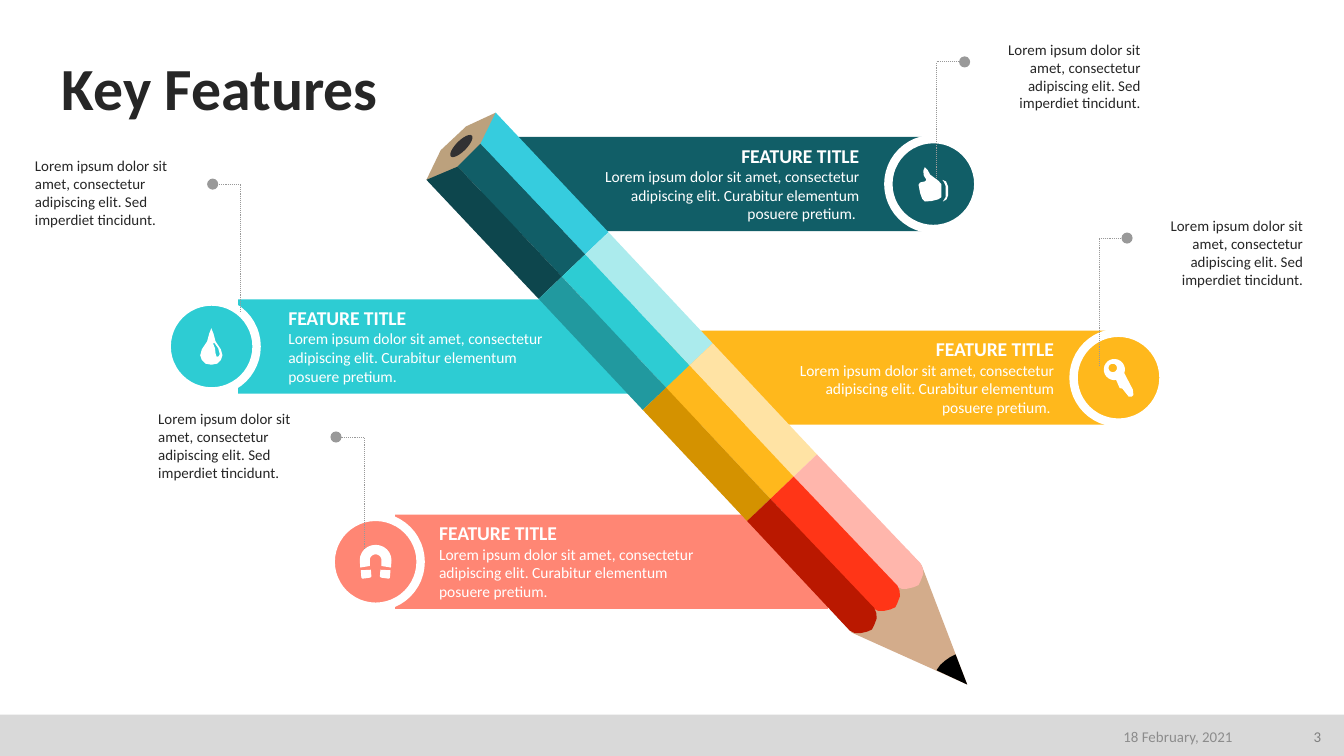
from collections import namedtuple
from math import cos, radians, sin

from lxml.etree import SubElement
from pptx import Presentation
from pptx.dml.color import RGBColor
from pptx.enum.dml import MSO_LINE
from pptx.enum.shapes import MSO_CONNECTOR, MSO_SHAPE as SHAPE
from pptx.enum.text import MSO_ANCHOR as ANCHOR, MSO_AUTO_SIZE, PP_ALIGN as ALIGN
from pptx.oxml.ns import qn
from pptx.util import Cm, Pt

DARK, WHITE, GREY = "262626", "FFFFFF", "999999"
TEAL, CYAN, YELLOW, CORAL = "115E67", "2DCCD3", "FFB81C", "FF8674"
LOREM = "Lorem ipsum dolor sit amet, consectetur adipiscing elit. "


def paint(shape, fill, line=None, width=0):
    shape.shadow.inherit = False
    shape.fill.solid()
    shape.fill.fore_color.rgb = RGBColor.from_string(fill)
    if line:
        shape.line.color.rgb = RGBColor.from_string(line)
        shape.line.width = Pt(width)
    else:
        shape.line.fill.background()


def write(frame, text, size=8, color=DARK, bold=False, align=ALIGN.LEFT, anchor=ANCHOR.TOP):
    frame.word_wrap = True
    frame.auto_size = MSO_AUTO_SIZE.NONE
    frame.vertical_anchor = anchor
    paragraph = frame.add_paragraph() if frame.text else frame.paragraphs[0]
    paragraph.alignment = align
    run = paragraph.add_run()
    run.text = text
    run.font.name = "Calibri"
    run.font.size = Pt(size)
    run.font.bold = bold
    run.font.color.rgb = RGBColor.from_string(color)
    return paragraph


prs = Presentation()
prs.slide_width, prs.slide_height = Cm(25.4), Cm(14.29)
shapes = prs.slides.add_slide(prs.slide_layouts[5]).shapes

# Footer band, page number and date
band = shapes.add_shape(SHAPE.RECTANGLE, 0, Cm(13.51), Cm(25.4), Cm(0.78))
paint(band, "D9D9D9")
for text, left, width, color in [("3", 24.28, 0.94, "808080"),
                                 ("18 February, 2021", 17.83, 5.72, "8C8C8C")]:
    footer = shapes.add_textbox(Cm(left), Cm(13.59), Cm(width), Cm(0.66))
    write(footer.text_frame, text, color=color, align=ALIGN.RIGHT, anchor=ANCHOR.MIDDLE)

# Title
title = shapes.title
title.left, title.top, title.width, title.height = Cm(1.17), Cm(1.02), Cm(23.11), Cm(1.32)
heading = title.text_frame
heading.margin_left = heading.margin_right = heading.margin_top = heading.margin_bottom = 0
write(heading, "Key Features", size=32, bold=True, anchor=ANCHOR.BOTTOM).line_spacing = 0.9

# Icons: lists of contours in cm, measured from the icon's top left corner
thumb_hand = [(0.15, 0.25), (0.1, 0.17), (0.09, 0.08), (0.12, 0.01), (0.17, 0.06), (0.22, 0.15),
              (0.38, 0.27), (0.43, 0.33), (0.43, 0.58), (0.37, 0.62), (0.25, 0.65), (0.12, 0.66),
              (0.07, 0.61), (0.03, 0.5), (0, 0.34), (0.03, 0.3), (0.12, 0.28)]
thumb_cuff = [(0.45, 0.25), (0.52, 0.28), (0.56, 0.38), (0.56, 0.54), (0.53, 0.62), (0.46, 0.66),
              (0.51, 0.58), (0.51, 0.36), (0.48, 0.29)]
thumb = [thumb_hand, thumb_cuff]

drop_half = [(0, 0), (0.04, 0.1), (0.08, 0.25), (0.18, 0.4), (0.21, 0.51), (0.18, 0.6),
             (0.11, 0.67), (0, 0.69)]
drop_shine = [(0.23, 0.28), (0.27, 0.38), (0.28, 0.48), (0.3, 0.54), (0.34, 0.53), (0.36, 0.49),
              (0.33, 0.38), (0.26, 0.28)]
drop = [[(0.2 + x, y) for x, y in drop_half] + [(0.2 - x, y) for x, y in drop_half[::-1]],
        drop_shine]

# The key's bow is an arc left open where the shaft joins it
bow_turn = [radians(degree) for degree in range(80, 386, 15)]
hole_turn = [radians(degree) for degree in range(0, 360, 20)]
key_shaft = [(0.55, 0.58), (0.56, 0.68), (0.53, 0.71), (0.47, 0.71), (0.35, 0.56), (0.3, 0.55)]
key = [[(0.2 + 0.2 * cos(a), 0.2 + 0.2 * sin(a)) for a in bow_turn] + key_shaft,
       [(0.17 + 0.08 * cos(a), 0.17 + 0.08 * sin(a)) for a in hole_turn]]

# The magnet's arch lies between two half circles, above mirrored feet
half_turn = [radians(degree) for degree in range(0, 181, 15)]
arch_outside = [(0.3 - 0.3 * cos(a), 0.29 - 0.29 * sin(a)) for a in half_turn]
arch_inside = [(0.3 + 0.11 * cos(a), 0.29 - 0.11 * sin(a)) for a in half_turn]
left_foot = [(0.02, 0.48), (0.21, 0.47), (0.22, 0.6), (0.2, 0.62), (0.05, 0.64), (0.03, 0.62)]
magnet = [arch_outside + [(0.59, 0.43), (0.41, 0.4)] + arch_inside + [(0.19, 0.4), (0.01, 0.43)],
          left_foot, [(0.6 - x, y) for x, y in left_foot]]

# Features: a bar with text, a circle with an icon and a callout on a leader line
Feature = namedtuple("Feature", "color on_right bar_left bar_width top text_left "
                                "circle_left leader_x leader_y icon")
features = [
    Feature(TEAL, True, 9.09, 8.53, 2.59, 10.9, 16.79, 17.7, 1.17, thumb),
    Feature(CYAN, False, 4.5, 7.54, 5.66, 5.2, 3.15, 4.55, 3.48, drop),
    Feature(YELLOW, True, 12.45, 8.66, 6.25, 14.58, 20.29, 20.77, 4.5, key),
    Feature(CORAL, False, 7.47, 8.18, 9.73, 8.05, 6.25, 6.88, 8.26, magnet),
]
BAR_HEIGHT, CIRCLE = 1.78, 1.7
outlines = []  # (color, contours, x offset, y offset)
for feature in features:
    align = ALIGN.RIGHT if feature.on_right else ALIGN.LEFT
    top = Cm(feature.top)
    bar = shapes.add_shape(SHAPE.RECTANGLE, Cm(feature.bar_left), top,
                           Cm(feature.bar_width), Cm(BAR_HEIGHT))
    paint(bar, feature.color)
    description = shapes.add_textbox(Cm(feature.text_left), top, Cm(5.59), Cm(1.85)).text_frame
    write(description, "FEATURE TITLE", size=10.5, color=WHITE, bold=True, align=align)
    ending = "Curabitur elementum posuere pretium." + (" " if feature.on_right else "")
    write(description, LOREM + ending, size=8.3, color=WHITE, align=align)

    circle_top = feature.top + (BAR_HEIGHT - CIRCLE) / 2
    circle = shapes.add_shape(SHAPE.OVAL, Cm(feature.circle_left), Cm(circle_top),
                              Cm(CIRCLE), Cm(CIRCLE))
    paint(circle, feature.color, WHITE, 4.5)
    icon_width, icon_height = map(max, zip(*sum(feature.icon, [])))
    outlines.append((WHITE, feature.icon, feature.circle_left + (CIRCLE - icon_width) / 2,
                     circle_top + (CIRCLE - icon_height) / 2))

    # Leader: up from the circle, then out to a dot beside the note
    x, y = feature.leader_x, feature.leader_y
    foot, corner = (x, y + 2.41), (x, y)
    dot = (x + 0.53 if feature.on_right else x - 0.53, y)
    for start, end in [(foot, corner), (corner, dot)]:
        leader = shapes.add_connector(MSO_CONNECTOR.STRAIGHT, *map(Cm, start + end))
        leader.line.color.rgb = RGBColor.from_string(GREY)
        leader.line.width = Pt(0.5)
        leader.line.dash_style = MSO_LINE.ROUND_DOT
        if end == dot:
            SubElement(leader.line._get_or_add_ln(), qn("a:tailEnd"), type="oval")
        SubElement(leader._element.spPr, qn("a:effectLst"))
    note_left, note_top = (x + 0.6, y - 0.53) if feature.on_right else (x - 4.14, y - 0.64)
    note = shapes.add_textbox(Cm(note_left), Cm(note_top), Cm(3.51), Cm(1.14))
    write(note.text_frame, LOREM + "Sed imperdiet tincidunt.", align=align)

# Pencil: four long edges cross three joints, giving three stripes per section
blunt_end = [(9.37, 2.13), (9.08, 2.72), (8.65, 3.15), (8.06, 3.4)]
joints = [[(11.5 - 0.44 * edge + 1.97 * joint, 4.39 + 0.42 * edge + 2.1 * joint)
           for edge in range(4)] for joint in range(3)]
section_colors = [("36CCDE", TEAL, "0D464D"), ("ABEBED", CYAN, "21999F"),
                  ("FFE3A4", YELLOW, "D49200")]
last_section_colors = ["FFB6AC", "FF3517", "BA1800"]
rounded_stripe = [(0, 0), (1.96, 2.06), (2, 2.15), (2.01, 2.26), (1.96, 2.39), (1.92, 2.47),
                  (1.83, 2.51), (1.7, 2.54), (1.6, 2.54), (1.5, 2.49), (-0.44, 0.42)]
blunt_face = [blunt_end[0], (8.81, 2.39), (8.33, 2.84), blunt_end[3], (8.66, 3.38), (9.3, 2.74)]
wood_tip = [(16.1, 11.96), (18.28, 12.94), (17.42, 10.69), (17.15, 10.39), (15.82, 11.66)]
lead_tip = [(17.7, 12.67), (17.77, 12.57), (17.86, 12.49), (17.96, 12.42), (18.06, 12.37),
            (18.28, 12.94)]

outlines += [("BCA17D", [blunt_face], 0, 0), ("D3AC8B", [wood_tip], 0, 0),
             ("000000", [lead_tip], 0, 0)]
for colors, upper, lower in zip(section_colors, [blunt_end] + joints, joints):
    for edge, color in enumerate(colors):
        stripe = [upper[edge], upper[edge + 1], lower[edge + 1], lower[edge]]
        outlines.append((color, [stripe], 0, 0))
for color, (x, y) in zip(last_section_colors, joints[-1]):
    outlines.append((color, [rounded_stripe], x, y))

# Draw the icons and the pencil parts
for color, contours, dx, dy in outlines:
    placed = [[(Cm(x + dx), Cm(y + dy)) for x, y in contour] for contour in contours]
    builder = shapes.build_freeform(*placed[0][0])
    for contour in placed:
        builder.move_to(*contour[0])
        builder.add_line_segments(contour[1:], close=True)
    paint(builder.convert_to_shape(), color)

# Lead showing at the blunt end
lead_core = shapes.add_shape(SHAPE.OVAL, Cm(8.44), Cm(2.66), Cm(0.56), Cm(0.2))
lead_core.rotation = -45
paint(lead_core, "323133")

prs.save("out.pptx")
